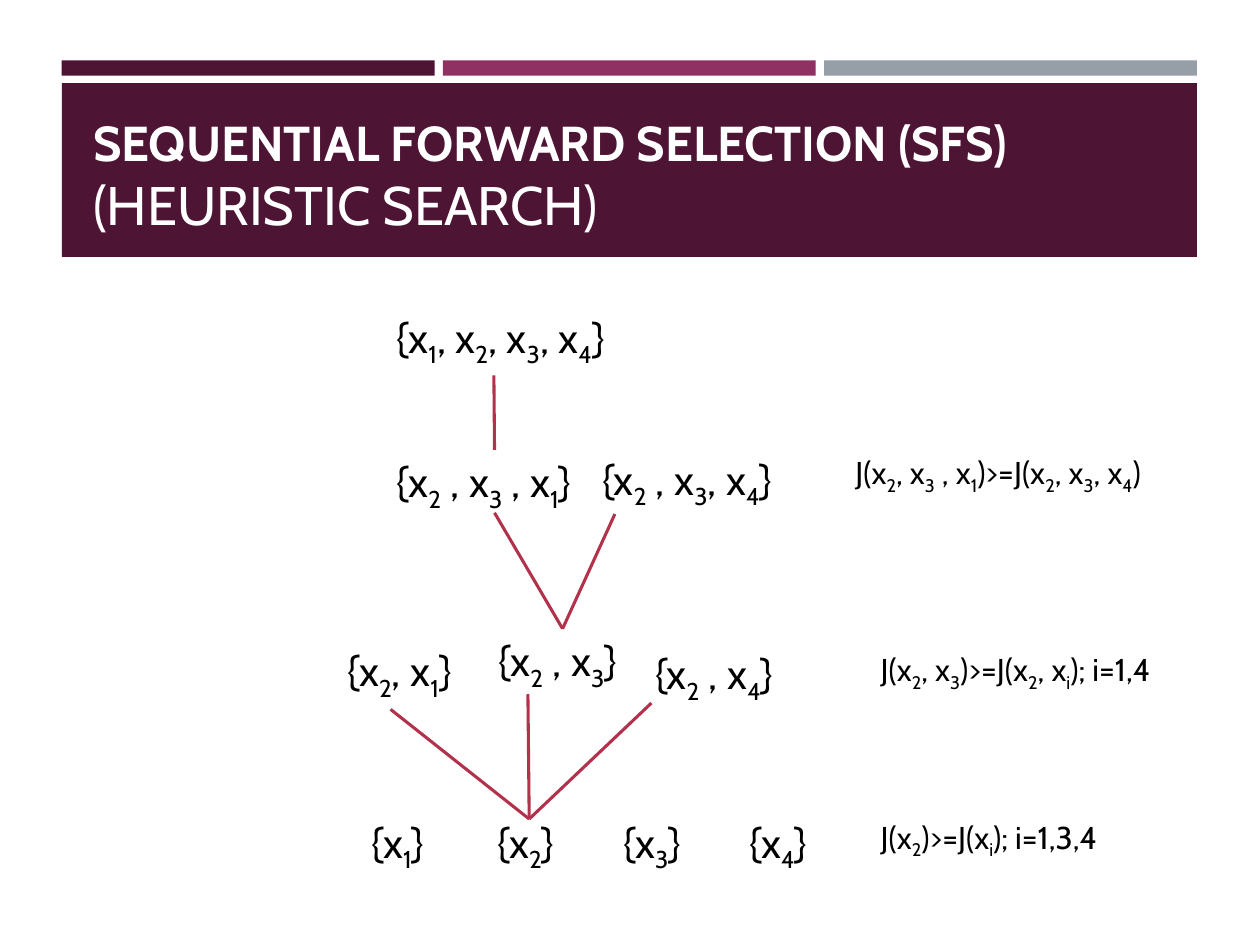
import pptx
import pptx.dml.color
import pptx.enum.shapes
import pptx.enum.text
import pptx.oxml
import pptx.oxml.ns
import pptx.util
from dataclasses import dataclass

COLUMNS, ROWS = 100, 75
TOP, BOTTOM = 0, 2  # connection sites of a rectangle


@dataclass
class Theme:
    font: str = "Cabin"
    plum: str = "4D1434"
    magenta: str = "903163"
    grey: str = "969FA7"
    branch: str = "B2324B"
    ink: str = "000000"
    paper: str = "FFFFFF"
    title_size: float = 28
    subtitle_size: float = 31
    node_size: float = 24
    criterion_size: float = 18
    branch_width: float = 1.75


class SlideBuilder:
    """Places elements on a grid of COLUMNS by ROWS cells."""

    def __init__(self, deck, theme):
        self.theme = theme
        self.cell_width = deck.slide_width / COLUMNS
        self.cell_height = deck.slide_height / ROWS
        self.slide = deck.slides.add_slide(deck.slide_layouts[5])

    def place(self, column, row):
        return round(column * self.cell_width), round(row * self.cell_height)

    def color(self, value):
        return pptx.dml.color.RGBColor.from_string(value)

    def style(self, run, size, color, bold=False):
        run.font.name = self.theme.font
        run.font.size = pptx.util.Pt(size)
        run.font.bold = bold
        run.font.color.rgb = self.color(color)

    def band(self, column, row, columns, rows, color):
        band = self.slide.shapes.add_shape(
            pptx.enum.shapes.MSO_SHAPE.RECTANGLE,
            *self.place(column, row), *self.place(columns, rows))
        band.shadow.inherit = False
        band.fill.solid()
        band.fill.fore_color.rgb = self.color(color)
        band.line.fill.background()

    def title(self, column, row, columns, rows, heading, subheading):
        title = self.slide.shapes.title
        title.left, title.top = self.place(column, row)
        title.width, title.height = self.place(columns, rows)
        frame = title.text_frame
        frame.text = f"{heading}\v{subheading}"
        frame.auto_size = pptx.enum.text.MSO_AUTO_SIZE.NONE
        frame.vertical_anchor = pptx.enum.text.MSO_ANCHOR.BOTTOM
        paragraph = frame.paragraphs[0]
        paragraph.alignment = pptx.enum.text.PP_ALIGN.LEFT
        first, second = paragraph.runs
        self.style(first, self.theme.title_size, self.theme.paper, bold=True)
        self.style(second, self.theme.subtitle_size, self.theme.paper)
        # Bring the title in front of its band
        self.slide.shapes._spTree.append(title._element)

    def formula(self, column, row, columns, rows, text, size):
        """Writes text in which the character after each _ is a subscript."""
        box = self.slide.shapes.add_textbox(
            *self.place(column, row), *self.place(columns, rows))
        frame = box.text_frame
        frame.word_wrap = False
        frame.auto_size = pptx.enum.text.MSO_AUTO_SIZE.SHAPE_TO_FIT_TEXT
        paragraph = frame.paragraphs[0]
        lead, *parts = text.split("_")
        pieces = [(lead, False)]
        for part in parts:
            pieces += [(part[0], True), (part[1:], False)]
        for piece, lowered in pieces:
            run = paragraph.add_run()
            run.text = piece
            self.style(run, size, self.theme.ink)
            if lowered:
                run._r.get_or_add_rPr().set("baseline", "-25000")
        return box

    def node(self, column, row, columns, text):
        return self.formula(column, row, columns, 5, text, self.theme.node_size)

    def criterion(self, column, row, columns, text):
        return self.formula(column, row, columns, 4, text, self.theme.criterion_size)

    def tab_stops(self, box, step, count):
        properties = box.text_frame.paragraphs[0]._p.get_or_add_pPr()
        stops = pptx.oxml.parse_xml(
            f"<a:tabLst {pptx.oxml.ns.nsdecls('a')}/>")
        for index in range(1, count + 1):
            stop = stops.makeelement(pptx.oxml.ns.qn("a:tab"), {
                "pos": str(round(index * step * self.cell_width)), "algn": "l"})
            stops.append(stop)
        properties.append(stops)

    def branch(self, start, end, start_join=None, end_join=None):
        branch = self.slide.shapes.add_connector(
            pptx.enum.shapes.MSO_CONNECTOR.STRAIGHT,
            *self.place(*start), *self.place(*end))
        branch.line.color.rgb = self.color(self.theme.branch)
        branch.line.width = pptx.util.Pt(self.theme.branch_width)
        branch._element.spPr.append(pptx.oxml.parse_xml(
            f"<a:effectLst {pptx.oxml.ns.nsdecls('a')}/>"))
        if start_join:
            branch.begin_connect(*start_join)
        if end_join:
            branch.end_connect(*end_join)


def main():
    deck = pptx.Presentation()
    deck.slide_width = pptx.util.Inches(10)
    deck.slide_height = pptx.util.Inches(7.5)
    theme = Theme()
    page = SlideBuilder(deck, theme)

    # Header bands and title
    for index, color in enumerate((theme.plum, theme.magenta, theme.grey)):
        page.band(4.9 + index * 30.25, 4.8, 29.6, 1.2, color)
    page.band(4.9, 6.6, 90.1, 13.8, theme.plum)
    page.title(6.4, 7.5, 87.4, 11.8,
               "SEQUENTIAL FORWARD SELECTION (SFS)", "(HEURISTIC SEARCH)")

    # Feature subsets, from the full set down to single features
    page.node(30.5, 24.2, 20.1, "{x_1, x_2, x_3, x_4}")
    best_triple = page.node(30.5, 35.7, 17.5, "{x_2 , x_3 , x_1}")
    page.node(46.8, 35.5, 16.8, "{x_2 , x_3, x_4}")
    page.node(26.6, 50.7, 11.2, "{x_2, x_1}")
    best_pair = page.node(38.6, 49.9, 12.1, "{x_2 , x_3}")
    page.node(51, 50.9, 12.1, "{x_2 , x_4}")
    singles = page.node(28.5, 64.3, 37.4, "{x_1}\t{x_2}\t{x_3}\t{x_4}")
    page.tab_stops(singles, step=10, count=3)

    # Selection criterion of each level
    page.criterion(66.9, 35.5, 27.6, "J(x_2, x_3 , x_1)>=J(x_2, x_3, x_4)")
    page.criterion(68.9, 51.1, 26.2, "J(x_2, x_3)>=J(x_2, x_i); i=1,4")
    page.criterion(68.9, 64.4, 21.2, "J(x_2)>=J(x_i); i=1,3,4")

    # Branches of the search
    for pair_end in ((31, 56.3), (41.9, 55.1), (51.7, 55.8)):
        page.branch((42, 65), pair_end)
    page.branch((44.6, 49.9), (38.6, 40.8), (best_pair, TOP), (best_triple, BOTTOM))
    page.branch((44.6, 49.9), (48.8, 40.8), (best_pair, TOP))
    page.branch((39.2, 35.7), (39.2, 29.8), (best_triple, TOP))

    deck.save("out.pptx")


if __name__ == "__main__":
    main()
